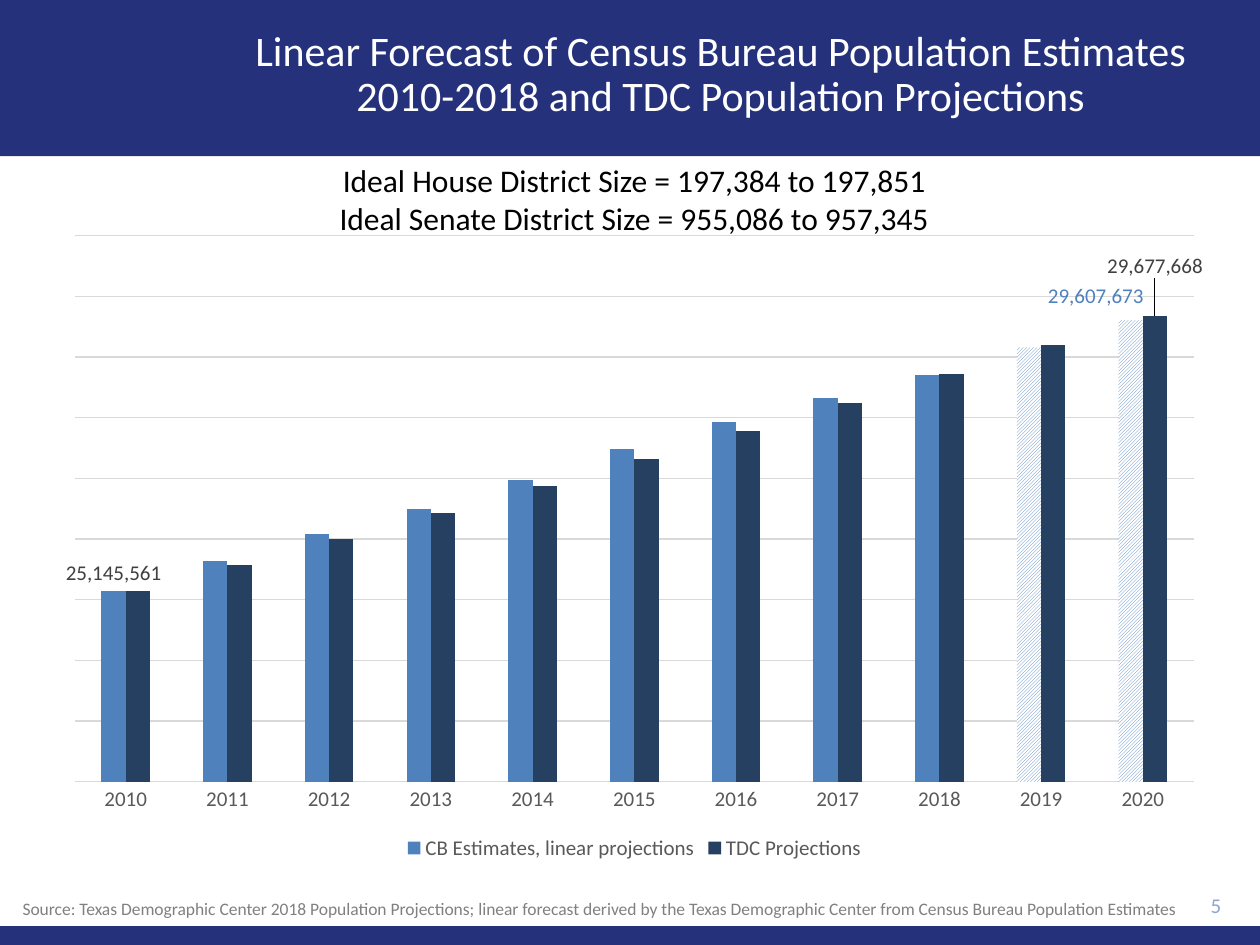
"""Build a slide comparing census estimates with population projections, 2010 to 2020."""
from lxml import etree
from pptx import Presentation
from pptx.chart import data
from pptx.dml.color import RGBColor
from pptx.enum import chart as ch, dml, shapes, text
from pptx.oxml import parse_xml
from pptx.oxml.ns import qn
from pptx.util import Pt

NAVY = RGBColor(0x25, 0x32, 0x7B)
WHITE = RGBColor(0xFF, 0xFF, 0xFF)
BLACK = RGBColor(0, 0, 0)
BLUE = RGBColor(0x4F, 0x81, 0xBD)
DARK = RGBColor(0x25, 0x40, 0x61)
PALE = RGBColor(0x8F, 0xA5, 0xD1)
GRAY = RGBColor(0x80, 0x80, 0x80)
SLATE = RGBColor(0x59, 0x59, 0x59)
INK = RGBColor(0x40, 0x40, 0x40)
RULE = RGBColor(0xD9, 0xD9, 0xD9)
FONT = "Calibri"
C = "http://schemas.openxmlformats.org/drawingml/2006/chart"
C15 = "http://schemas.microsoft.com/office/drawing/2012/chart"


def write(shape, lines, size, color, align=text.PP_ALIGN.CENTER,
          anchor=text.MSO_ANCHOR.TOP, space=None):
    frame = shape.text_frame
    frame.word_wrap = True
    frame.vertical_anchor = anchor
    frame.text = lines
    for para in frame.paragraphs:
        para.alignment = align
        para.line_spacing = space
        para.font.name = FONT
        para.font.size = Pt(size)
        para.font.color.rgb = color
    return frame


def layout(inner="", **spots):
    parts = "".join(f'<c:{key} val="{val}"/>' for key, val in spots.items())
    return parse_xml(f'<c:layout xmlns:c="{C}"><c:manualLayout>{inner}{parts}'
                     '</c:manualLayout></c:layout>')


deck = Presentation()
deck.slide_width, deck.slide_height = Pt(720), Pt(540)
slide = deck.slides.add_slide(deck.slide_layouts[5])
items = slide.shapes
title = items.title

for top, high in ((0, 89.3), (529.2, 10.8)):
    band = items.add_shape(shapes.MSO_SHAPE.RECTANGLE, 0, Pt(top), Pt(720), Pt(high))
    band.shadow.inherit = False
    band.fill.solid()
    band.fill.fore_color.rgb = NAVY
    band.line.fill.background()
    title._element.addprevious(band._element)

title.left, title.top, title.width, title.height = Pt(110.9), Pt(7.2), Pt(601.9), Pt(72)
write(title, "Linear Forecast of Census Bureau Population Estimates "
      "2010-2018 and TDC Population Projections", 24, WHITE,
      anchor=text.MSO_ANCHOR.MIDDLE, space=0.9)

page = items.add_textbox(Pt(640.8), Pt(504.7), Pt(64.1), Pt(24.5))
write(page, "5", 12, PALE, align=text.PP_ALIGN.RIGHT, anchor=text.MSO_ANCHOR.MIDDLE)

ideal = items.add_textbox(Pt(150.5), Pt(88.6), Pt(424.1), Pt(51.1))
write(ideal, "Ideal House District Size = 197,384 to 197,851\n"
      "Ideal Senate District Size = 955,086 to 957,345", 18, BLACK)

source = items.add_textbox(Pt(5.8), Pt(509.8), Pt(689.8), Pt(19.4))
note = write(source, "Source: Texas Demographic Center 2018 Population Projections; "
             "linear forecast derived by the Texas Demographic Center from "
             "Census Bureau Population Estimates", 10, GRAY, align=text.PP_ALIGN.LEFT)
props = note.paragraphs[0]._p.get_or_add_pPr()
props.set("marL", str(Pt(62.6)))
props.set("indent", str(-Pt(62.6)))

table = data.CategoryChartData(number_format="#,##0")
table.categories = [str(year) for year in range(2010, 2021)]
table.add_series("CB Estimates, linear projections", (
    25145561, 25646227, 26089620, 26489464, 26977142, 27486814,
    27937492, 28322717, 28701845, 29158577, 29607673))
table.add_series("TDC Projections", (
    25145561, 25567291, 25996722, 26433242, 26876429, 27326193,
    27782691, 28245982, 28716123, 29193268, 29677668))
chart = items.add_chart(ch.XL_CHART_TYPE.COLUMN_CLUSTERED, Pt(29.5), Pt(127.4),
                        Pt(666), Pt(367.2), table).chart
chart.has_title = False
chart.font.name, chart.font.size = FONT, Pt(12)
chart.font.color.rgb = BLACK
chart.has_legend = True
key = chart.legend
key.position = ch.XL_LEGEND_POSITION.BOTTOM
key.include_in_layout = False

years, count = chart.category_axis, chart.value_axis
years.major_tick_mark = ch.XL_TICK_MARK.NONE
years.format.line.color.rgb = RULE
years.format.line.width = Pt(0.75)
for font in (key.font, years.tick_labels.font):
    font.name, font.size = FONT, Pt(12)
    font.color.rgb = SLATE
count.visible = False
count.minimum_scale, count.maximum_scale = 22000000, 31000000
count.major_unit = 1000000
count.tick_labels.number_format = "#,##0"
count.tick_labels.number_format_is_linked = False
grid = count.major_gridlines.format.line
grid.color.rgb, grid.width = RULE, Pt(0.75)

area = chart._chartSpace.chart.plotArea
for old in area.findall(qn("c:layout")):
    area.remove(old)
area.insert(0, layout('<c:layoutTarget val="inner"/><c:xMode val="edge"/>'
                      '<c:yMode val="edge"/>', x=0.02, y=0.02, w=0.96, h=0.85))

plot = chart.plots[0]
plot.gap_width, plot.overlap = 219, 0
plot.vary_by_categories = False
cb, tdc = plot.series
for series, color in ((cb, BLUE), (tdc, DARK)):
    series.format.fill.solid()
    series.format.fill.fore_color.rgb = color
    series.invert_if_negative = False
    series.data_labels.show_value = False
for spot in (9, 10):
    fill = cb.points[spot].format.fill
    fill.patterned()
    fill.pattern = dml.MSO_PATTERN.DARK_UPWARD_DIAGONAL
    fill.fore_color.rgb, fill.back_color.rgb = BLUE, WHITE

for series, spot, color, shift in ((cb, 0, INK, None), (cb, 10, BLUE, (-0.03, -0.01)),
                                   (tdc, 10, INK, (0, -0.05))):
    label = series.points[spot].data_label
    label.font.name, label.font.size = FONT, Pt(12)
    label.font.color.rgb = color
    label.position = ch.XL_LABEL_POSITION.OUTSIDE_END
    if shift:
        group = series.data_labels._element
        mark = group.findall(qn("c:dLbl"))[-1]
        mark.find(qn("c:idx")).addnext(layout(x=shift[0], y=shift[1]))
        extra = etree.SubElement(group, qn("c:extLst"))
        ext = etree.SubElement(extra, qn("c:ext"), nsmap={"c15": C15},
                               uri="{CE6537A1-D6FC-4f65-9D91-7224C49458BB}")
        etree.SubElement(ext, f"{{{C15}}}showLeaderLines", val="1")

deck.save("out.pptx")
